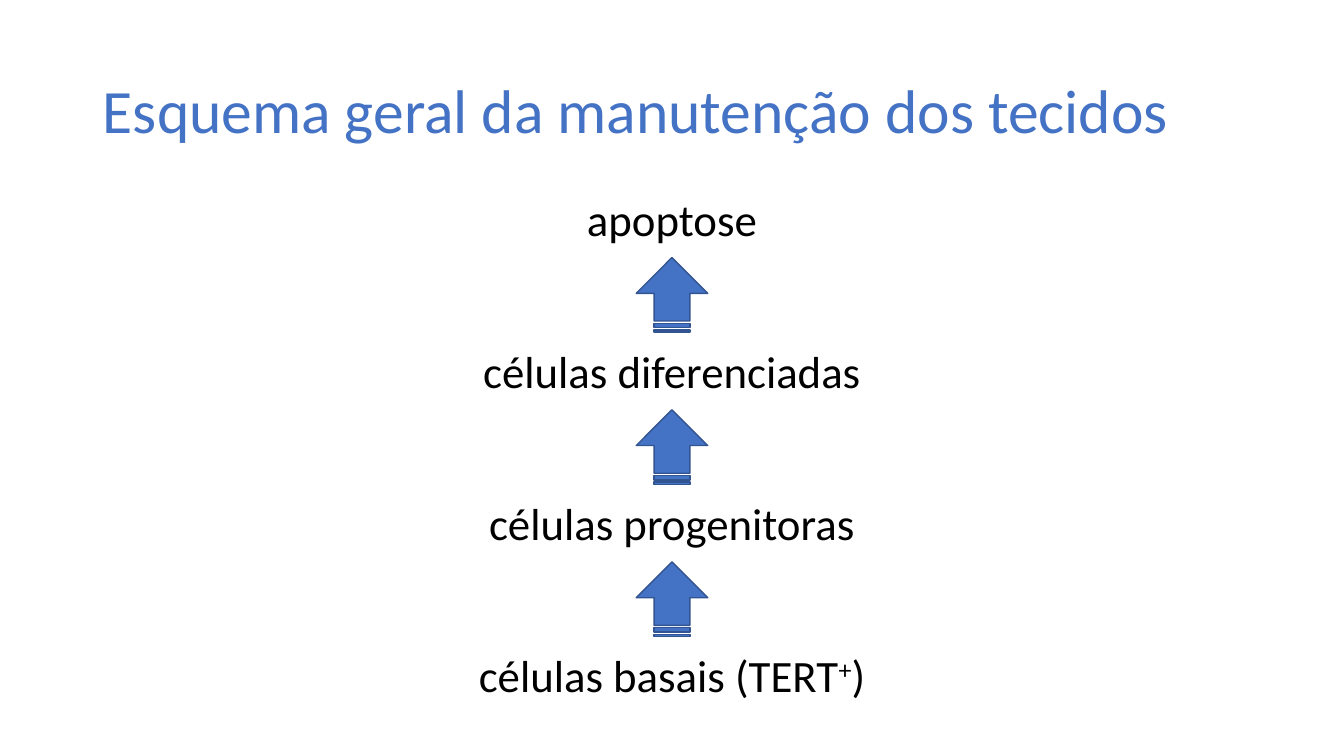
from pptx import Presentation
from pptx.dml.color import RGBColor
from pptx.enum.shapes import MSO_SHAPE
from pptx.enum.text import MSO_ANCHOR, MSO_AUTO_SIZE, PP_ALIGN
from pptx.util import Inches, Pt

ARROW = MSO_SHAPE.STRIPED_RIGHT_ARROW
LEFT, CENTER = PP_ALIGN.LEFT, PP_ALIGN.CENTER
MIDDLE = MSO_ANCHOR.MIDDLE
NO_FIT, GROW = MSO_AUTO_SIZE.NONE, MSO_AUTO_SIZE.SHAPE_TO_FIT_TEXT

# Content: stages from top to bottom, each with its box width and (text, superscript) runs
TITLE = "Esquema geral da manutenção dos tecidos"
STAGES = [
    (1.91, [("apoptose", False)]),
    (3.98, [("células diferenciadas", False)]),
    (3.86, [("células progenitoras", False)]),
    (4.09, [("células basais (TERT", False), ("+", True), (")", False)]),
]
COLORS = {"blue": "4472C4", "outline": "325491", "text": "000000"}
FONT = "Calibri"

# Layout in inches: one column of equally spaced rows
SLIDE_WIDTH, SLIDE_HEIGHT = 13.33, 7.5
CENTER_X = SLIDE_WIDTH / 2
FIRST_ROW, ROW_STEP = 1.85, 1.51
LABEL_HEIGHT = 0.64
ARROW_LENGTH, ARROW_WIDTH, ARROW_OFFSET = 0.74, 0.71, 0.72


def color(name):
    return RGBColor.from_string(COLORS[name])


def add_run(paragraph, text, size, color_name, superscript=False):
    run = paragraph.add_run()
    run.text = text
    run.font.name = FONT
    run.font.size = Pt(size)
    run.font.color.rgb = color(color_name)
    if superscript:
        run._r.get_or_add_rPr().set("baseline", "30000")


def add_label(slide, top, width, runs):
    box = slide.shapes.add_textbox(Inches(CENTER_X - width / 2), Inches(top),
                                   Inches(width), Inches(LABEL_HEIGHT))
    frame = box.text_frame
    frame.word_wrap = False
    frame.auto_size = GROW
    paragraph = frame.paragraphs[0]
    paragraph.alignment = CENTER
    for text, superscript in runs:
        add_run(paragraph, text, 32, "text", superscript)


def add_up_arrow(slide, top):
    arrow = slide.shapes.add_shape(ARROW, Inches(CENTER_X - ARROW_LENGTH / 2), Inches(top),
                                   Inches(ARROW_LENGTH), Inches(ARROW_WIDTH))
    arrow.rotation = 270
    arrow.shadow.inherit = False
    arrow.fill.solid()
    arrow.fill.fore_color.rgb = color("blue")
    arrow.line.color.rgb = color("outline")
    arrow.line.width = Pt(1)


def main():
    presentation = Presentation()
    presentation.slide_width = Inches(SLIDE_WIDTH)
    presentation.slide_height = Inches(SLIDE_HEIGHT)
    slide = presentation.slides.add_slide(presentation.slide_layouts[5])

    # Title
    title = slide.shapes.title
    title.left, title.top = Inches(0.92), Inches(0.4)
    title.width, title.height = Inches(11.5), Inches(1.45)
    title.text_frame.vertical_anchor = MIDDLE
    title.text_frame.auto_size = NO_FIT
    paragraph = title.text_frame.paragraphs[0]
    paragraph.alignment = LEFT
    paragraph.line_spacing = 0.9
    add_run(paragraph, TITLE, 44, "blue")

    # Stages, with an arrow leading up to each one from the next
    for row, (width, runs) in enumerate(STAGES):
        top = FIRST_ROW + row * ROW_STEP
        add_label(slide, top, width, runs)
        if row < len(STAGES) - 1:
            add_up_arrow(slide, top + ARROW_OFFSET)

    presentation.save("out.pptx")


if __name__ == "__main__":
    main()
